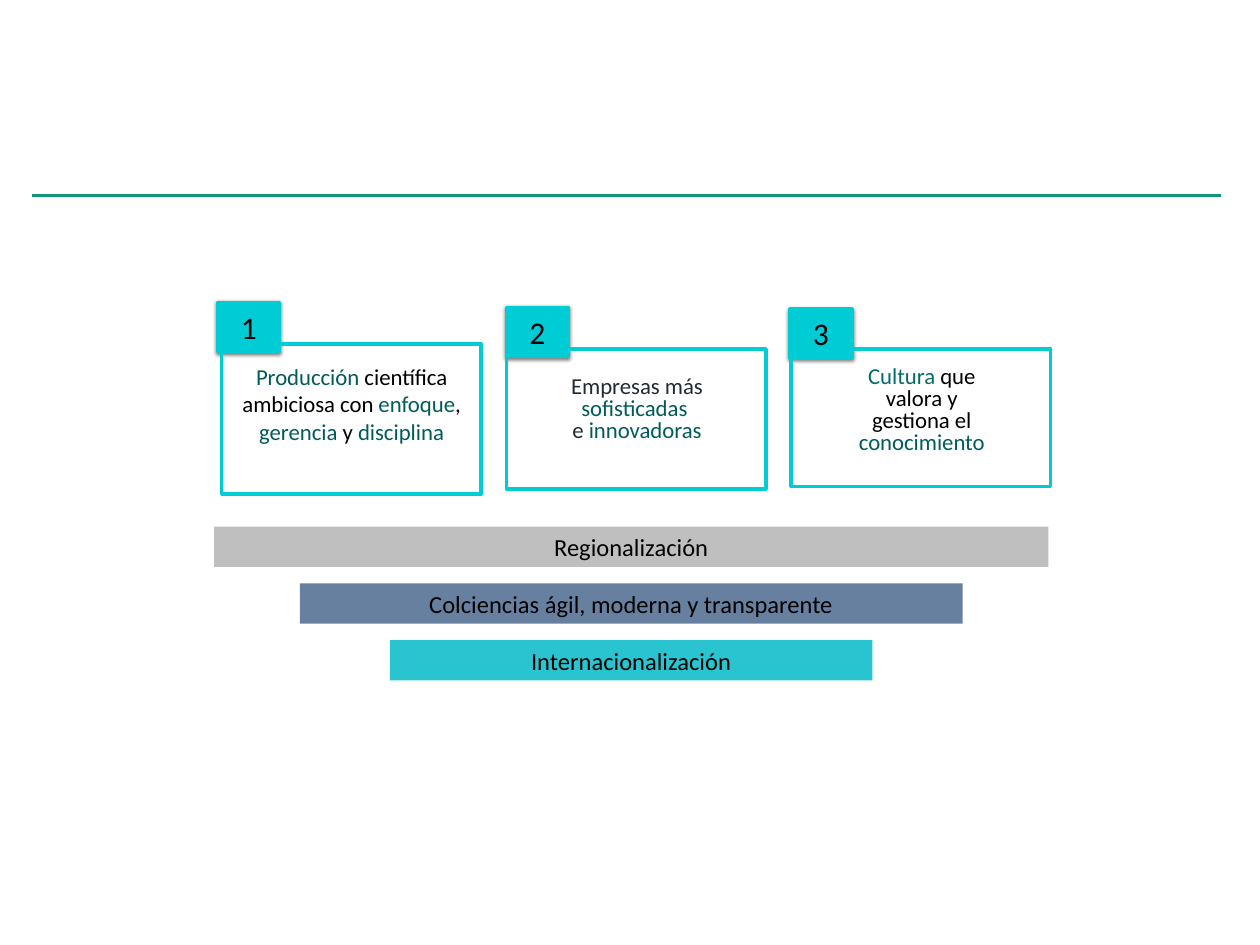
from dataclasses import dataclass

from lxml import etree
from pptx import Presentation
from pptx.dml.color import RGBColor
from pptx.enum.shapes import MSO_CONNECTOR, MSO_SHAPE
from pptx.enum.text import MSO_ANCHOR, MSO_AUTO_SIZE, PP_ALIGN
from pptx.oxml import parse_xml
from pptx.oxml.ns import qn
from pptx.util import Inches, Pt

RECT = MSO_SHAPE.RECTANGLE
STRAIGHT = MSO_CONNECTOR.STRAIGHT
TOP, MIDDLE = MSO_ANCHOR.TOP, MSO_ANCHOR.MIDDLE
CENTER = PP_ALIGN.CENTER
FIT = MSO_AUTO_SIZE.SHAPE_TO_FIT_TEXT
COLS, ROWS = 100, 75
SHADOW = (
    '<a:effectLst xmlns:a="http://schemas.openxmlformats.org/drawingml/2006/main">'
    '<a:outerShdw blurRad="25400" dist="12700" dir="5400000" rotWithShape="0">'
    '<a:srgbClr val="000000"><a:alpha val="50000"/></a:srgbClr>'
    '</a:outerShdw></a:effectLst>'
)


@dataclass(frozen=True)
class Theme:
    """Colours, font and type sizes of the slide."""
    font: str = "Calibri"
    black: str = "000000"
    navy: str = "222A35"
    teal: str = "005C5A"
    light_teal: str = "006B69"
    rule: str = "129579"
    badge: str = "00CCD6"
    outline: str = "00CCD3"
    grey: str = "BFBFBF"
    blue: str = "6880A0"
    cyan: str = "2AC4D0"
    body: int = 13
    bar: int = 14
    number: int = 18


T = Theme()


def write(sp, paragraphs, *, size, anchor=MIDDLE, spacing=None):
    """Fill a shape with centred paragraphs made of (text, colour) runs."""
    tf = sp.text_frame
    tf.word_wrap = True
    tf.auto_size = FIT
    tf.vertical_anchor = anchor
    tf.margin_left = tf.margin_right = Inches(0.04)
    tf.margin_top = tf.margin_bottom = Inches(0.04)
    for i, runs in enumerate(paragraphs):
        p = tf.add_paragraph() if i else tf.paragraphs[0]
        p.alignment = CENTER
        if spacing:
            p.line_spacing = spacing
        for text, color in runs:
            r = p.add_run()
            r.text = text
            r.font.name = T.font
            r.font.size = Pt(size)
            r.font.color.rgb = RGBColor.from_string(color)


class Board:
    """Draws elements on one slide in grid columns and rows."""

    def __init__(self, prs):
        """Add a blank slide and work out its grid cell."""
        self.s = prs.slides.add_slide(prs.slide_layouts[6])
        self.cell_w, self.cell_h = prs.slide_width / COLS, prs.slide_height / ROWS

    def place(self, x, y, w, h):
        """Turn grid units into slide lengths."""
        return (round(x * self.cell_w), round(y * self.cell_h),
                round(w * self.cell_w), round(h * self.cell_h))

    def rect(self, box, fill=None, line=None):
        """Draw a plain rectangle."""
        sp = self.s.shapes.add_shape(RECT, *self.place(*box))
        sp.shadow.inherit = False
        if fill:
            sp.fill.solid()
            sp.fill.fore_color.rgb = RGBColor.from_string(fill)
        else:
            sp.fill.background()
        if line:
            sp.line.color.rgb = RGBColor.from_string(line)
            sp.line.width = Pt(2)
        else:
            sp.line.fill.background()
        return sp

    def bar(self, box, text, fill):
        """Draw a labelled bar."""
        write(self.rect(box, fill), [[(text, T.black)]], size=T.bar)

    def badge(self, x, y, number):
        """Draw a numbered badge with a soft shadow."""
        sp = self.rect((x, y, 4.9, 3.9), T.badge, T.outline)
        pr = sp._element.spPr
        pr.replace(pr.find(qn("a:effectLst")), parse_xml(SHADOW))
        write(sp, [[(str(number), T.black)]], size=T.number)

    def text(self, box, paragraphs, **fmt):
        """Add a body text box."""
        sp = self.s.shapes.add_textbox(*self.place(*box))
        write(sp, paragraphs, size=T.body, **fmt)

    def rule(self, x1, x2, y):
        """Draw a horizontal rule."""
        left, top, width, _ = self.place(x1, y, x2 - x1, 0)
        sp = self.s.shapes.add_connector(STRAIGHT, left, top, left + width, top)
        sp.line.color.rgb = RGBColor.from_string(T.rule)
        sp.line.width = Pt(2)
        etree.SubElement(sp._element.spPr, qn("a:effectLst"))


BARS = [
    ("Regionalización", 66.2, T.grey),
    ("Colciencias ágil, moderna y transparente", 52.6, T.blue),
    ("Internacionalización", 38.3, T.cyan),
]
PILLARS = [
    dict(badge=(17.3, 24), frame=(27.3, 11.9), box=(18.8, 28.4, 18.2, 9.6),
         fmt=dict(anchor=TOP),
         paragraphs=[[("Producción ", T.teal), ("científica ambiciosa con ", T.black),
                      ("enfoque", T.teal), (", ", T.black), ("gerencia ", T.teal),
                      ("y ", T.black), ("disciplina", T.teal)]]),
    dict(badge=(40.2, 24.4), frame=(27.7, 11.1), box=(44.3, 29.5, 12.5, 6.1),
         fmt=dict(spacing=0.8),
         paragraphs=[[("Empresas más", T.navy)], [("sofisticadas ", T.teal)],
                     [("e ", T.navy), ("innovadoras", T.teal)]]),
    dict(badge=(62.7, 24.5), frame=(27.7, 10.9), box=(67.2, 28.7, 11.9, 7.8),
         fmt=dict(spacing=0.8),
         paragraphs=[[("Cultura ", T.light_teal), ("que valora y gestiona el ", T.black),
                      ("conocimiento", T.teal)]]),
]


def main():
    """Build and save the slide."""
    prs = Presentation()
    prs.slide_width, prs.slide_height = Inches(10), Inches(7.5)
    board = Board(prs)
    for i, (text, width, fill) in enumerate(BARS):
        board.bar((50.1 - width / 2, 41.8 + 4.5 * i, width, 3.2), text, fill)
    for i, pillar in enumerate(PILLARS):
        board.badge(*pillar["badge"], i + 1)
        board.text(pillar["box"], pillar["paragraphs"], **pillar["fmt"])
        top, height = pillar["frame"]
        board.rect((17.6 + 22.6 * i, top, 20.6, height), line=T.outline)
    board.rule(2.5, 96.9, 15.5)
    prs.save("out.pptx")


if __name__ == "__main__":
    main()
